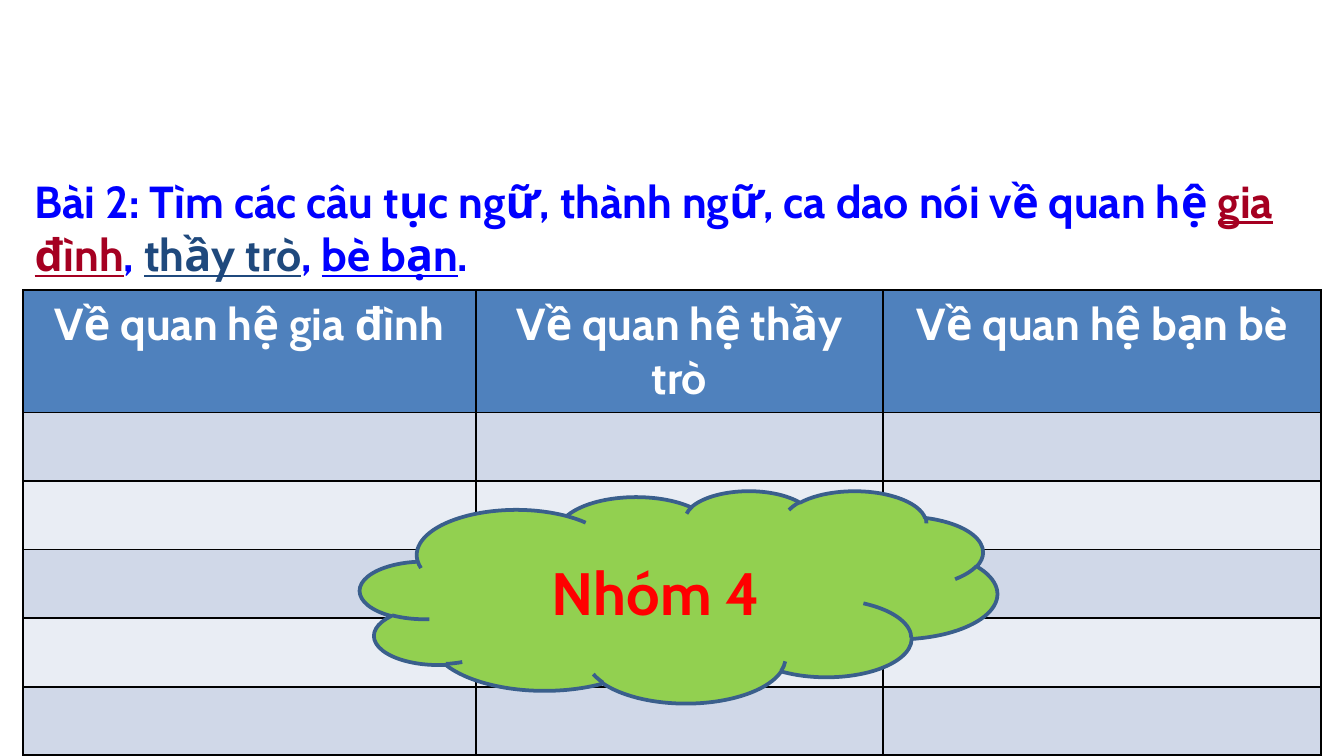
from lxml.etree import SubElement
from pptx import Presentation
from pptx.dml.color import RGBColor
from pptx.enum.shapes import MSO_SHAPE as Shape
from pptx.enum.text import MSO_ANCHOR as Anchor, PP_ALIGN as Align
from pptx.oxml.ns import qn
from pptx.util import Inches, Pt

COLORS = {
    "prompt": "0000FF", "family": "A50021", "teacher": "1F497D",
    "header": "4F81BD", "band_dark": "D0D8E8", "band_light": "E9EDF4",
    "border": "000000", "white": "FFFFFF",
    "cloud": "92D050", "outline": "3A5F8C", "group": "FF0000",
}
PROMPT = [
    ("Bài 2: Tìm các câu tục ngữ, thành ngữ, ca dao nói về quan hệ ", "prompt", False),
    ("gia đình", "family", True),
    (", ", "prompt", False),
    ("thầy trò", "teacher", True),
    (", ", "prompt", False),
    ("bè bạn", "prompt", True),
    (".", "prompt", False),
]
HEADINGS = ["Về quan hệ gia đình", "Về quan hệ thầy trò", "Về quan hệ bạn bè"]
COLUMN_WIDTHS = [3.37, 3.03, 3.26]
ROW_HEIGHTS = [0.91] + [0.51] * 5


def rgb(name):
    """Return the named colour."""
    return RGBColor.from_string(COLORS[name])


def add_span(para, text, color, size=24, **extra):
    """Append bold text to a paragraph."""
    span = para.add_run()
    span.text = text
    span.font.color.rgb = rgb(color)
    values = {"name": "Cabin", "size": Pt(size), "bold": True, **extra}
    for key, value in values.items():
        setattr(span.font, key, value)


def paint(target, color):
    """Give a shape or cell a solid fill."""
    target.fill.solid()
    target.fill.fore_color.rgb = rgb(color)


def add_borders(cell, color, width=1):
    """Draw a solid line on all four sides of a cell."""
    properties = cell._tc.get_or_add_tcPr()
    for side in ("lnL", "lnR", "lnT", "lnB"):
        line = SubElement(properties, qn(f"a:{side}"), w=str(Pt(width)))
        fill = SubElement(line, qn("a:solidFill"))
        SubElement(fill, qn("a:srgbClr"), val=COLORS[color])


def add_table(page):
    """Add the answer table with its headings and banded empty rows."""
    frame = page.shapes.add_table(
        len(ROW_HEIGHTS), len(COLUMN_WIDTHS), Inches(0.17), Inches(2.16),
        Inches(sum(COLUMN_WIDTHS)), Inches(sum(ROW_HEIGHTS)))
    table = frame.table
    for column, width in zip(table.columns, COLUMN_WIDTHS):
        column.width = Inches(width)
    for index, (row, height) in enumerate(zip(table.rows, ROW_HEIGHTS)):
        row.height = Inches(height)
        band = "band_dark" if index % 2 else "band_light"
        for cell in row.cells:
            add_borders(cell, "border")
            paint(cell, band if index else "header")
    for cell, heading in zip(table.rows[0].cells, HEADINGS):
        para = cell.text_frame.paragraphs[0]
        para.alignment = Align.CENTER
        add_span(para, heading, "white")


def add_prompt(page):
    """Add the exercise prompt with underlined topics."""
    box = page.shapes.add_textbox(Inches(0.16), Inches(1.24), Inches(9.67), Inches(0.91))
    box.text_frame.word_wrap = True
    para = box.text_frame.paragraphs[0]
    for text, color, underline in PROMPT:
        add_span(para, text, color, underline=underline)


def add_cloud(page):
    """Add the cloud that names the group size."""
    cloud = page.shapes.add_shape(
        Shape.CLOUD, Inches(2.68), Inches(3.65), Inches(4.74), Inches(1.58))
    cloud.shadow.inherit = False
    paint(cloud, "cloud")
    cloud.line.color.rgb = rgb("outline")
    cloud.line.width = Pt(2)
    cloud.text_frame.vertical_anchor = Anchor.MIDDLE
    para = cloud.text_frame.paragraphs[0]
    para.alignment = Align.CENTER
    add_span(para, "Nhóm 4", "group", size=32)


def main():
    """Build and save the slide in 16:9 format."""
    deck = Presentation()
    deck.slide_width = Inches(10)
    deck.slide_height = Inches(10 * 9 / 16)
    page = deck.slides.add_slide(deck.slide_layouts[6])
    add_table(page)
    add_prompt(page)
    add_cloud(page)
    deck.save("out.pptx")


if __name__ == "__main__":
    main()
